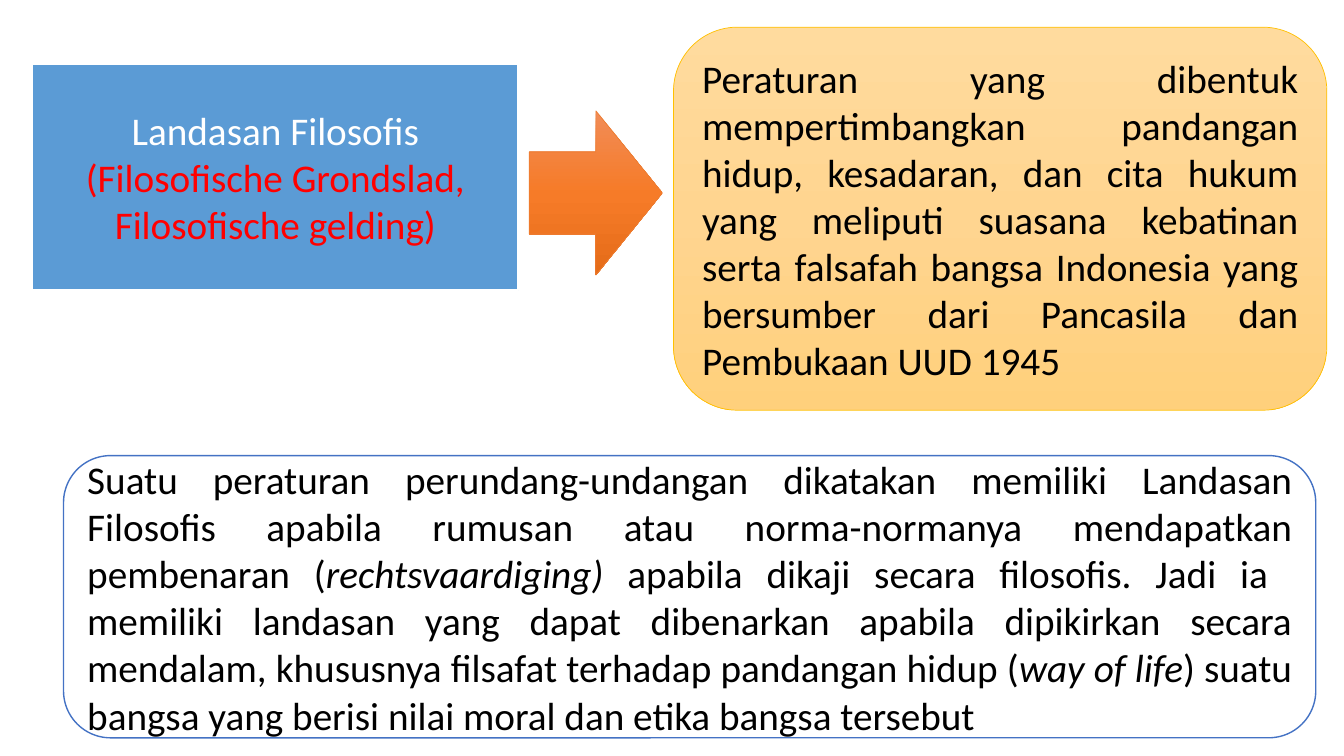
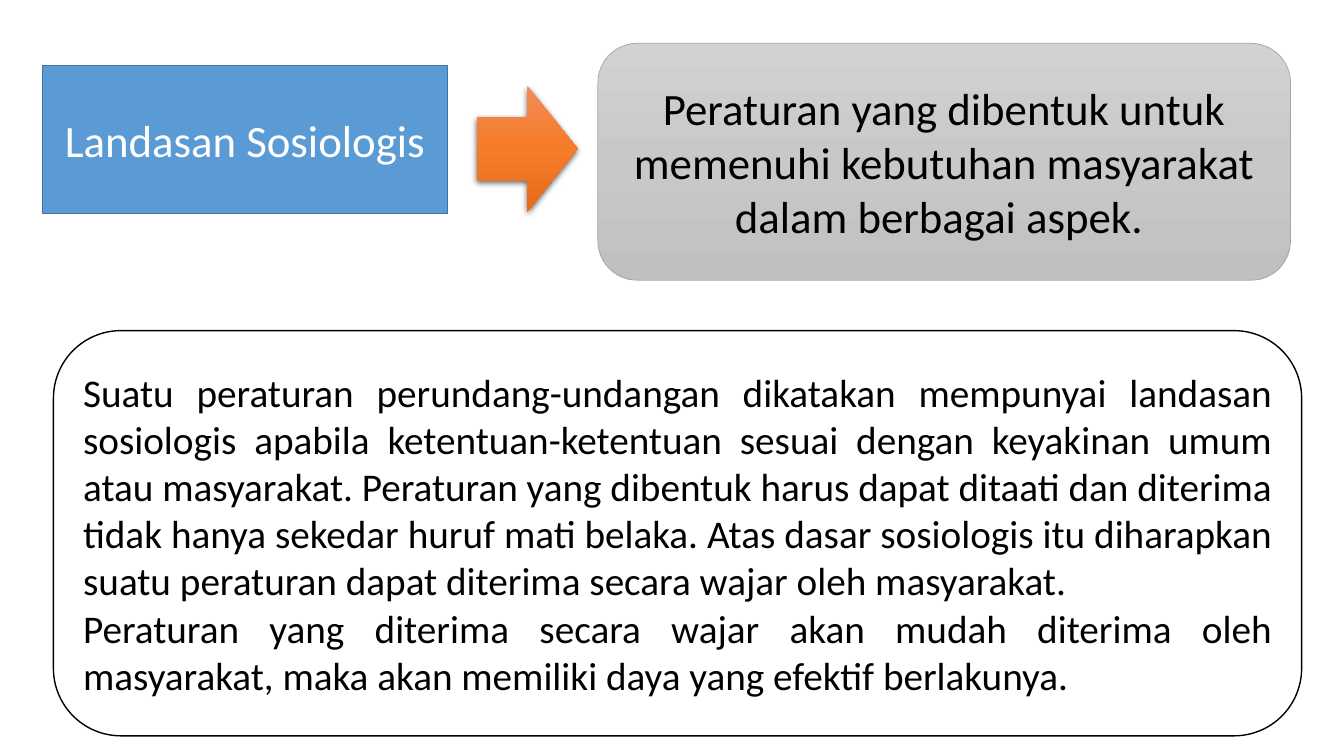
from copy import deepcopy

from lxml import etree
from pptx import Presentation
from pptx import util as u
from pptx.dml import color as dml
from pptx.enum import shapes, text
from pptx.oxml import ns

FONT = "Calibri"
BLACK, WHITE, RED, BLUE = "000000", "FFFFFF", "FF0000", "5B9BD5"
ORANGE_FADE = ["F18C57", "F67B28", "E56C19"]
GOLD_FADE = ["FFDB9E", "FFD590", "FFD07C"]
GREY_FADE = ["D2D2D2", "C8C8C8", "C0C0C0"]
RECTANGLE = shapes.MSO_SHAPE.RECTANGLE
ROUNDED = shapes.MSO_SHAPE.ROUNDED_RECTANGLE
ARROW = shapes.MSO_SHAPE.RIGHT_ARROW
CENTER = text.PP_ALIGN.CENTER
JUSTIFY = text.PP_ALIGN.JUSTIFY


def rgb(value):
    return dml.RGBColor.from_string(value)


def fill_solid(box, color):
    box.fill.solid()
    box.fill.fore_color.rgb = rgb(color)


def fill_fade(box, colors):
    box.fill.gradient()
    box.fill.gradient_angle = 270
    stop_list = box.element.xpath(".//a:gsLst")[0]
    while len(stop_list) < len(colors):
        stop_list.append(deepcopy(stop_list[-1]))
    for index, (stop, color) in enumerate(zip(box.fill.gradient_stops, colors)):
        stop.position = index / (len(colors) - 1)
        stop.color.rgb = rgb(color)


def add_box(page, kind, area, fill, line=None, line_width=1):
    box = page.shapes.add_shape(kind, *[u.Inches(length) for length in area])
    box.shadow.inherit = False
    if isinstance(fill, list):
        fill_fade(box, fill)
    else:
        fill_solid(box, fill)
    if line:
        box.line.color.rgb = rgb(line)
        box.line.width = u.Pt(line_width)
    else:
        box.line.fill.background()
    return box


def add_shadow(box):
    effects = box.element.spPr.find(ns.qn("a:effectLst"))
    shadow = etree.SubElement(
        effects, ns.qn("a:outerShdw"), blurRad=str(u.Pt(4.5)),
        dist=str(u.Pt(1.5)), dir="5400000", algn="ctr", rotWithShape="0")
    color = etree.SubElement(shadow, ns.qn("a:srgbClr"), val=BLACK)
    etree.SubElement(color, ns.qn("a:alpha"), val="63000")


def add_span(para, words, size=28, color=BLACK, italic=False):
    span = para.add_run()
    span.text = words
    span.font.name = FONT
    span.font.size = u.Pt(size)
    span.font.color.rgb = rgb(color)
    span.font.italic = italic


def write(box, *paragraphs, align=JUSTIFY, **style):
    frame = box.text_frame
    frame.word_wrap = True
    frame.vertical_anchor = text.MSO_ANCHOR.MIDDLE
    for index, spans in enumerate(paragraphs):
        para = frame.add_paragraph() if index else frame.paragraphs[0]
        para.alignment = align
        for words, changes in spans:
            add_span(para, words, **{**style, **changes})


def build_philosophical(page):
    heading = add_box(page, RECTANGLE, (0.32, 0.63, 4.82, 2.25), BLUE, WHITE, 1.5)
    write(heading,
          [("Landasan Filosofis", {})],
          [("(Filosofische Grondslad, Filosofische gelding)", {"color": RED})],
          align=CENTER, color=WHITE)
    meaning = add_box(page, ROUNDED, (6.68, 0.27, 6.48, 3.8), GOLD_FADE, "FFC000", 0.5)
    write(meaning, [(
        "Peraturan yang dibentuk mempertimbangkan pandangan hidup, kesadaran, "
        "dan cita hukum yang meliputi suasana kebatinan serta falsafah bangsa "
        "Indonesia yang bersumber dari Pancasila dan Pembukaan UUD 1945", {})])
    add_box(page, ARROW, (5.25, 1.1, 1.32, 1.63), ORANGE_FADE, "ED7D31", 0.5)
    explanation = add_box(page, ROUNDED, (0.63, 4.52, 12.42, 2.8), WHITE, "4472C4")
    write(explanation, [
        ("Suatu peraturan perundang-undangan dikatakan memiliki Landasan "
         "Filosofis apabila rumusan atau norma-normanya mendapatkan "
         "pembenaran (", {}),
        ("rechtsvaardiging) ", {"italic": True}),
        ("apabila dikaji secara filosofis. Jadi ia  memiliki landasan yang "
         "dapat dibenarkan apabila dipikirkan secara mendalam, khususnya "
         "filsafat terhadap pandangan hidup (", {}),
        ("way of life", {"italic": True}),
        (") suatu bangsa yang berisi nilai moral dan etika bangsa tersebut", {})])


def build_sociological(page):
    heading = add_box(page, RECTANGLE, (0.42, 0.65, 4.02, 1.47), BLUE, "43739E")
    write(heading, [("Landasan Sosiologis", {})],
          align=CENTER, size=32, color=WHITE)
    meaning = add_box(page, ROUNDED, (5.93, 0.43, 6.87, 2.35), GREY_FADE, "A5A5A5", 0.5)
    write(meaning, [(
        "Peraturan yang dibentuk untuk memenuhi kebutuhan masyarakat dalam "
        "berbagai aspek. ", {})], align=CENTER, size=32)
    explanation = add_box(page, ROUNDED, (0.53, 3.28, 12.38, 4.02), WHITE, BLACK)
    write(explanation,
          [("Suatu peraturan perundang-undangan dikatakan mempunyai landasan "
            "sosiologis apabila ketentuan-ketentuan sesuai dengan keyakinan "
            "umum atau masyarakat. Peraturan yang dibentuk harus dapat ditaati "
            "dan diterima tidak hanya sekedar huruf mati belaka. Atas dasar "
            "sosiologis itu diharapkan suatu peraturan dapat diterima secara "
            "wajar oleh masyarakat. ", {})],
          [("Peraturan yang diterima secara wajar akan mudah diterima oleh "
            "masyarakat, maka akan memiliki daya yang efektif berlakunya.", {})])
    add_shadow(add_box(page, ARROW, (4.73, 0.85, 1, 1.25), ORANGE_FADE))


def main():
    deck = Presentation()
    deck.slide_width = u.Inches(13.33)
    deck.slide_height = u.Inches(7.5)
    for build in (build_philosophical, build_sociological):
        build(deck.slides.add_slide(deck.slide_layouts[6]))
    deck.save("out.pptx")


if __name__ == "__main__":
    main()
